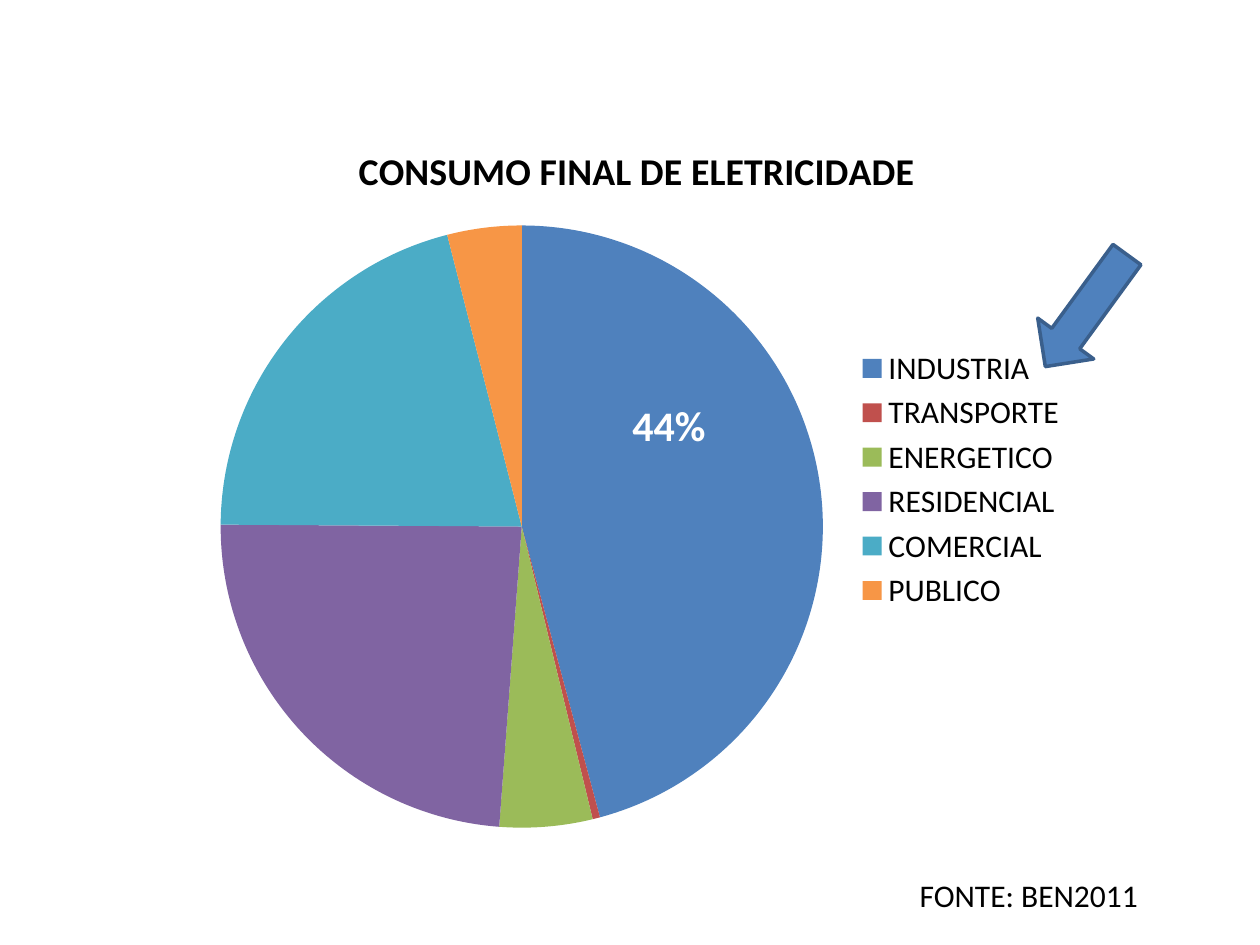
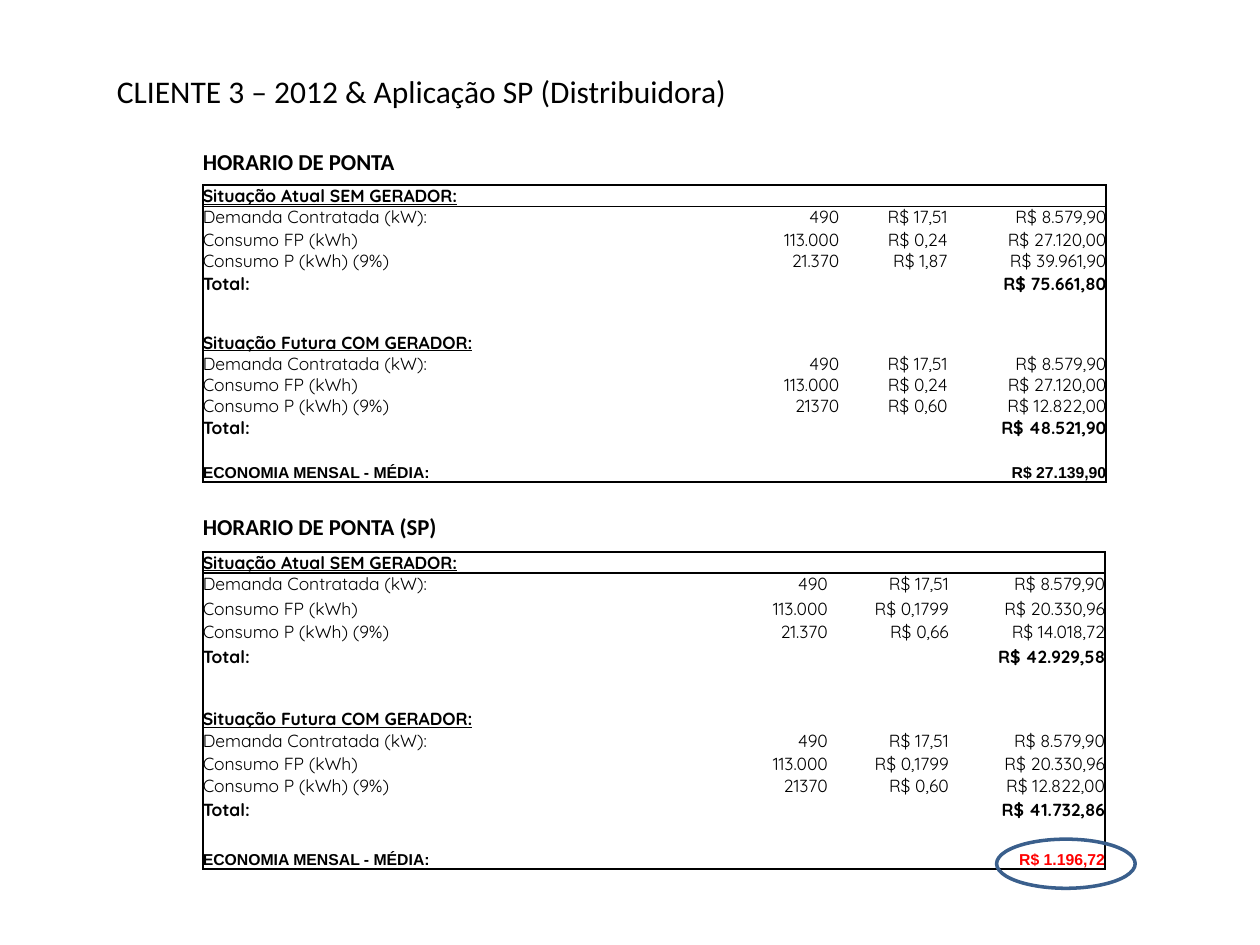
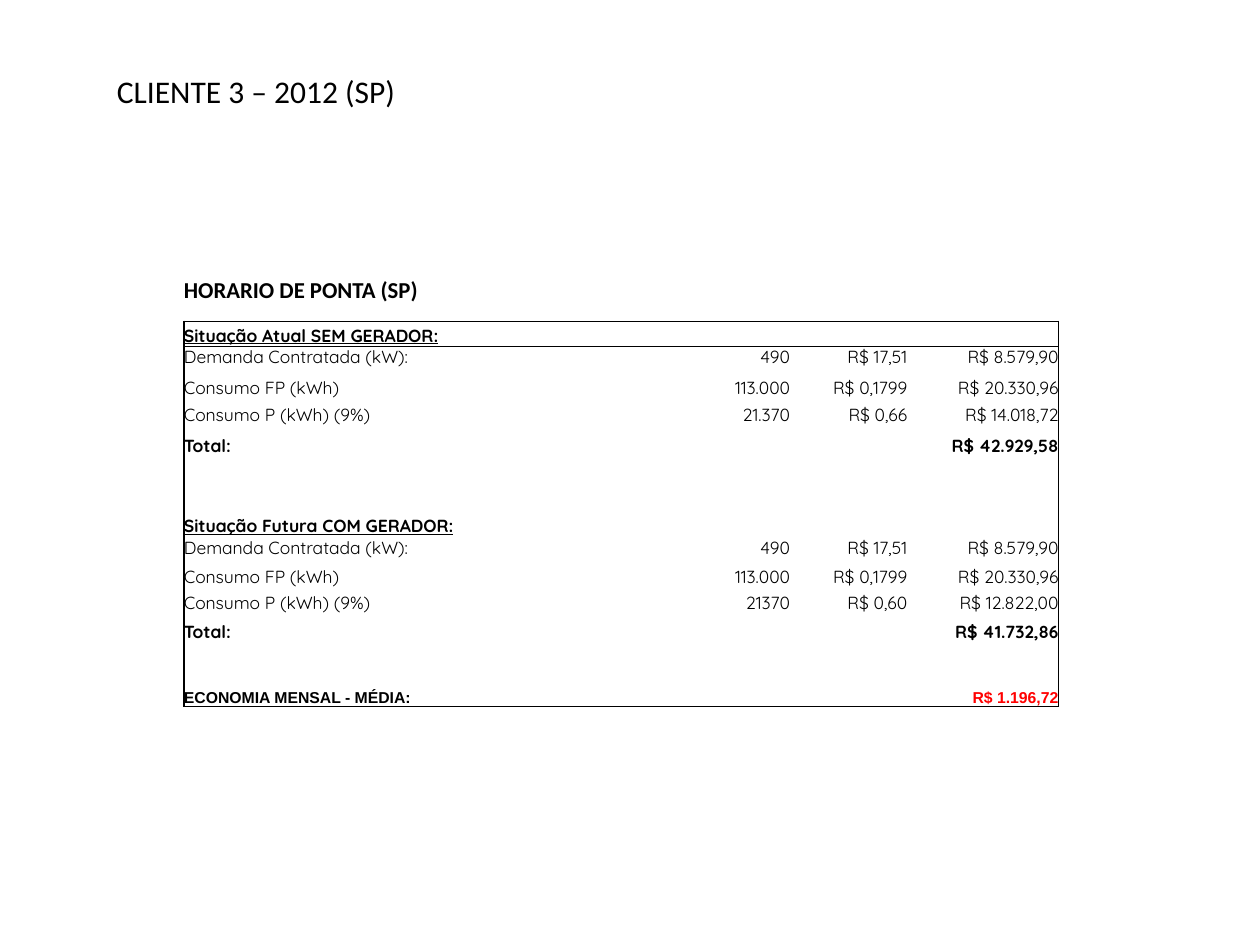
from lxml import etree
from pptx import Presentation
from pptx.chart.data import CategoryChartData
from pptx.dml.color import RGBColor
from pptx.enum.chart import XL_CHART_TYPE, XL_LEGEND_POSITION
from pptx.enum.shapes import MSO_SHAPE
from pptx.enum.text import MSO_ANCHOR, MSO_AUTO_SIZE, PP_ALIGN
from pptx.oxml import parse_xml
from pptx.oxml.ns import nsdecls, qn
from pptx.util import Inches, Pt

COLORS = {
    "text": "000000",
    "white": "FFFFFF",
    "saving": "FF0000",
    "arrow": "4F81BD",
    "outline": "3A5F8C",
}
NO_STYLE_NO_GRID = "{2D5ABB26-0587-4C30-8999-92F81FD0307C}"

# Relative row heights, shared by every cost table
ROW_HEIGHTS = [1.03, 0.48, 0.2, 0.24, 0.22, 0.24, 0.2, 0.2,
               0.21, 0.2, 0.23, 0.21, 0.23, 0.2, 0.27, 0.21]
HEADING_ROW, FIRST_ROW, LAST_ROW = 1, 2, 15
SECTION_ROWS, TOTAL_ROWS = (2, 9), (6, 13)


def add_text(slide, text, left, top, width, height, size=18, color="text", bold=False):
    shape = slide.shapes.add_textbox(Inches(left), Inches(top), Inches(width), Inches(height))
    shape.text_frame.word_wrap = True
    shape.text_frame.auto_size = MSO_AUTO_SIZE.SHAPE_TO_FIT_TEXT
    shape.text_frame.text = text
    font = shape.text_frame.paragraphs[0].runs[0].font
    font.name, font.size, font.bold = "Calibri", Pt(size), bold
    font.color.rgb = RGBColor.from_string(COLORS[color])


def add_cost_table(slide, content, left, top, widths, scale):
    heights = [round(height * scale, 2) for height in ROW_HEIGHTS]
    frame = slide.shapes.add_table(len(heights), len(widths), Inches(left), Inches(top),
                                   Inches(sum(widths)), Inches(sum(heights)))
    table = frame.table
    table.first_row = table.horz_banding = False
    table._tbl.tblPr.find(qn("a:tableStyleId")).text = NO_STYLE_NO_GRID
    for column, width in zip(table.columns, widths):
        column.width = Inches(width)
    for row, height in zip(table.rows, heights):
        row.height = Inches(height)

    for row_index, values in enumerate(content["rows"]):
        for column_index, value in enumerate(values):
            cell = table.cell(row_index, column_index)
            cell.margin_left = cell.margin_right = cell.margin_top = cell.margin_bottom = 0

            # The frame runs around the rows below the heading
            framed = row_index >= FIRST_ROW
            sides = {
                "lnL": framed and column_index == 0,
                "lnR": framed and column_index == len(widths) - 1,
                "lnT": row_index == FIRST_ROW,
                "lnB": row_index in (HEADING_ROW, LAST_ROW),
            }
            for side, drawn in sides.items():
                if drawn:
                    cell._tc.get_or_add_tcPr().append(parse_xml(
                        f'<a:{side} {nsdecls("a")} w="12700"><a:solidFill>'
                        f'<a:srgbClr val="{COLORS["text"]}"/></a:solidFill></a:{side}>'))
            cell.fill.background()

            paragraph = cell.text_frame.paragraphs[0]
            if not value:
                etree.SubElement(paragraph._p, qn("a:endParaRPr"), sz="900")
                continue
            paragraph.text = value
            paragraph.alignment = PP_ALIGN.RIGHT if column_index else PP_ALIGN.LEFT
            font = paragraph.runs[0].font
            font.name, font.size = "Quicksand", Pt(10)
            font.bold = row_index in (HEADING_ROW, LAST_ROW) + SECTION_ROWS + TOTAL_ROWS
            font.underline = row_index in SECTION_ROWS
            color = "text"
            if row_index == HEADING_ROW:
                font.name, font.size = "Calibri", Pt(13)
                cell.vertical_anchor = MSO_ANCHOR.MIDDLE
            elif row_index == LAST_ROW:
                font.name, font.size = "Arial", Pt(9)
                cell.vertical_anchor = MSO_ANCHOR.BOTTOM
                if column_index:
                    color = content["saving_color"]
            elif row_index in SECTION_ROWS:
                cell.vertical_anchor = MSO_ANCHOR.BOTTOM
            font.color.rgb = RGBColor.from_string(COLORS[color])

    for row_index in SECTION_ROWS:
        table.cell(row_index, 0).merge(table.cell(row_index, 1))


# Cost data: off-peak (price, cost), then peak (price, cost) and total per situation
blank = [""] * 4
cost_sources = {
    "national": ("HORARIO DE PONTA", ("R$ 0,24", "R$ 27.120,00"),
                 ("R$ 1,87", "R$ 39.961,90"), "R$ 75.661,80", "R$ 48.521,90",
                 "R$ 27.139,90", "text"),
    "sp": ("HORARIO DE PONTA (SP)", ("R$ 0,1799", "R$ 20.330,96"),
           ("R$ 0,66", "R$ 14.018,72"), "R$ 42.929,58", "R$ 41.732,86",
           "R$ 1.196,72", "saving"),
}
costs = {}
for key, (heading, off_peak, peak, total, future_total, saving, color) in cost_sources.items():
    rows = [blank, [heading, "", "", ""]]
    for section, peak_use, peak_costs, section_total in (
            ("Situação Atual SEM GERADOR:", "21.370", peak, total),
            ("Situação Futura COM GERADOR:", "21370", ("R$ 0,60", "R$ 12.822,00"), future_total)):
        rows += [
            [section, "", "", ""],
            ["Demanda Contratada (kW):", "490", "R$ 17,51", "R$ 8.579,90"],
            ["Consumo FP (kWh)", "113.000", *off_peak],
            ["Consumo P (kWh) (9%)", peak_use, *peak_costs],
            ["Total:", "", "", section_total],
            blank, blank,
        ]
    rows[-2:] = [blank, ["ECONOMIA MENSAL - MÉDIA:", "", "", saving]]
    costs[key] = {"rows": rows, "saving_color": color}

presentation = Presentation()
presentation.slide_width, presentation.slide_height = Inches(10), Inches(7.5)
blank_layout = presentation.slide_layouts[6]

# Slide 1: electricity consumption by sector
slide = presentation.slides.add_slide(blank_layout)
sectors = [
    ("INDUSTRIA", 46, "4F81BD"),
    ("TRANSPORTE", 0.4, "C0504D"),
    ("ENERGETICO", 5, "9BBB59"),
    ("RESIDENCIAL", 24, "8064A2"),
    ("COMERCIAL", 21, "4BACC6"),
    ("PUBLICO", 4, "F79646"),
]
chart_title = "CONSUMO FINAL DE ELETRICIDADE"
chart_data = CategoryChartData()
chart_data.categories = [name for name, share, color in sectors]
chart_data.add_series(chart_title, [share for name, share, color in sectors])
chart = slide.shapes.add_chart(XL_CHART_TYPE.PIE, Inches(1.54), Inches(0.92),
                               Inches(7.03), Inches(5.77), chart_data).chart
chart.font.name, chart.font.size = "Calibri", Pt(18)
chart.font.color.rgb = RGBColor.from_string(COLORS["text"])
chart.has_title = True
chart.chart_title.text_frame.text = chart_title
title_font = chart.chart_title.text_frame.paragraphs[0].runs[0].font
title_font.name, title_font.size, title_font.bold = "Calibri", Pt(21.6), True
title_font.color.rgb = RGBColor.from_string(COLORS["text"])
chart.has_legend = True
chart.legend.position = XL_LEGEND_POSITION.RIGHT
chart.legend.include_in_layout = False
pie = chart.plots[0]
pie.vary_by_categories = True
for index, (name, share, color) in enumerate(sectors):
    fill = pie.series[0].points[index].format.fill
    fill.solid()
    fill.fore_color.rgb = RGBColor.from_string(color)

# Fixed place of the pie inside the chart
plot_area = chart._chartSpace.chart.plotArea
for layout in plot_area.findall(qn("c:layout")):
    plot_area.remove(layout)
plot_area.insert(0, parse_xml(
    f'<c:layout {nsdecls("c")}><c:manualLayout><c:layoutTarget val="inner"/>'
    '<c:xMode val="edge"/><c:yMode val="edge"/><c:x val="0.03"/><c:y val="0.15"/>'
    '<c:w val="0.68"/><c:h val="0.83"/></c:manualLayout></c:layout>'))

add_text(slide, "44%", 4.92, 3.12, 0.8, 0.5, size=24, color="white", bold=True)
add_text(slide, "FONTE: BEN2011", 7.2, 6.9, 2.52, 0.4)

arrow = slide.shapes.add_shape(MSO_SHAPE.RIGHT_ARROW, Inches(8.07), Inches(2.19),
                               Inches(1.1), Inches(0.55))
arrow.rotation = 126.1
arrow.fill.solid()
arrow.fill.fore_color.rgb = RGBColor.from_string(COLORS["arrow"])

# Slide 2: national and SP tariffs compared
slide = presentation.slides.add_slide(blank_layout)
add_text(slide, "CLIENTE 3 – 2012 & Aplicação SP (Distribuidora)", 0.83, 0.52, 5.28, 0.4)
add_cost_table(slide, costs["national"], 1.61, 0.36, [4.25, 0.8, 0.86, 1.26], 0.738)
add_cost_table(slide, costs["sp"], 1.61, 3.15, [4.18, 0.78, 0.96, 1.24], 0.814)
saving_ring = slide.shapes.add_shape(MSO_SHAPE.OVAL, Inches(7.91), Inches(6.66),
                                     Inches(1.1), Inches(0.39))
saving_ring.fill.background()

# Outline of the two highlight shapes
for shape in (arrow, saving_ring):
    shape.shadow.inherit = False
    shape.line.color.rgb = RGBColor.from_string(COLORS["outline"])
    shape.line.width = Pt(2)

# Slide 3: SP tariff alone
slide = presentation.slides.add_slide(blank_layout)
add_text(slide, "CLIENTE 3 – 2012 (SP)", 0.83, 0.52, 2.99, 0.4)
add_cost_table(slide, costs["sp"], 1.46, 1.04, [4.05, 0.76, 0.93, 1.2], 1)

presentation.save("out.pptx")
